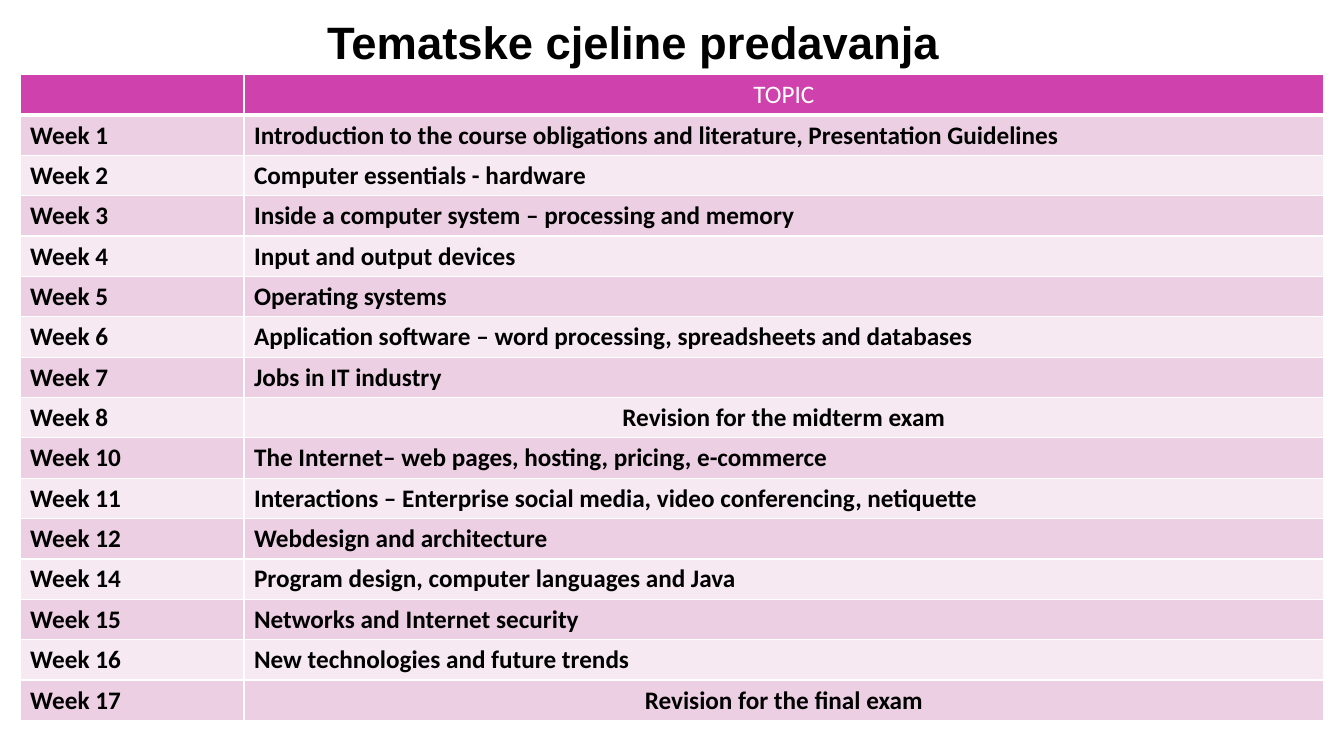
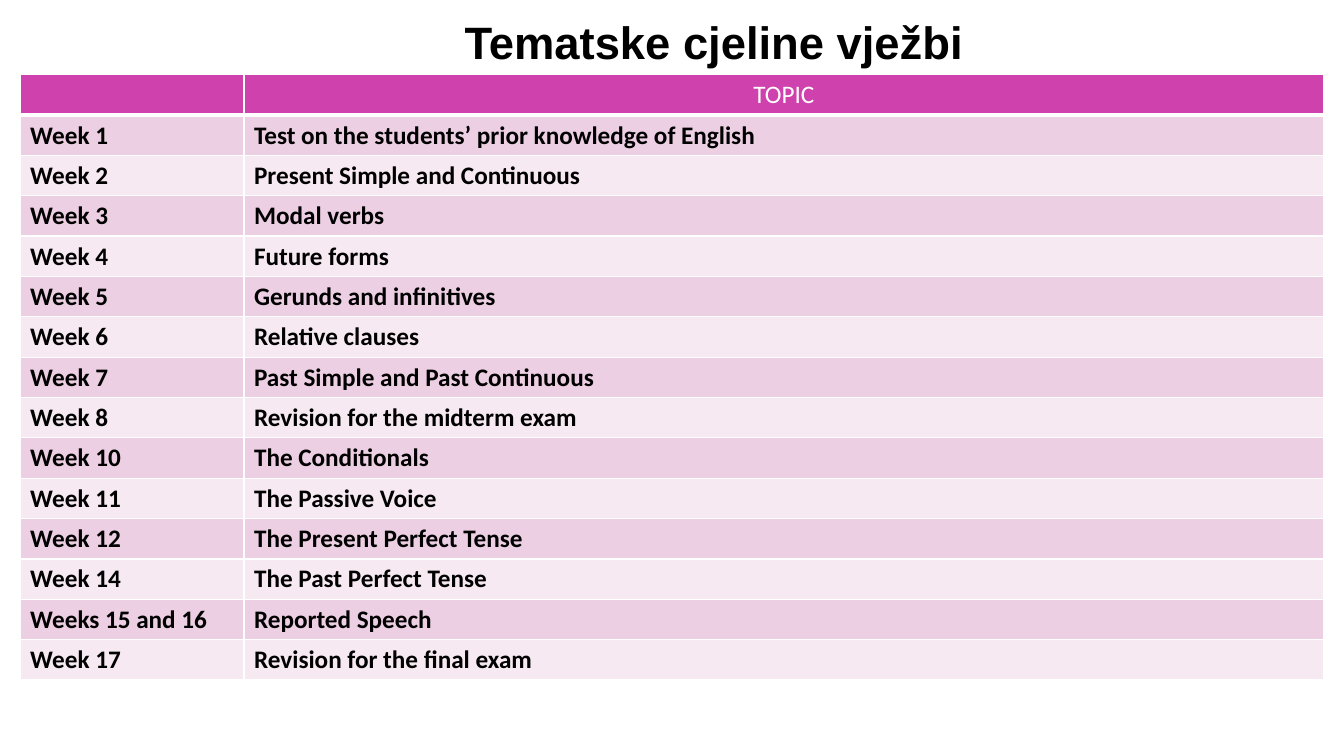
from lxml.etree import SubElement
from pptx import Presentation
from pptx.dml.color import RGBColor
from pptx.enum.text import MSO_ANCHOR, PP_ALIGN
from pptx.oxml.ns import qn
from pptx.util import Inches, Pt

# Shared style
BLACK, WHITE = "000000", "FFFFFF"
HEADER, BAND_DARK, BAND_LIGHT = "CF41AD", "EDCFE3", "F6E9F1"
TITLE_FONT, BODY_FONT = "Arial", "Calibri"
TITLE_TOP, TITLE_W, TITLE_H = 0.31, 9.71, 0.27
TABLE_LEFT, TABLE_TOP, ROW_H = 0.2, 0.74, 0.4
COL_WIDTHS = (2.22, 10.71)

# Topics: (week, topic)
LECTURES = [
    ("Week 1", "Introduction to the course obligations and literature, Presentation Guidelines"),
    ("Week 2", "Computer essentials - hardware"),
    ("Week 3", "Inside a computer system – processing and memory"),
    ("Week 4", "Input and output devices"),
    ("Week 5", "Operating systems"),
    ("Week 6", "Application software – word processing, spreadsheets and databases"),
    ("Week 7", "Jobs in IT industry"),
    ("Week 8", "Revision for the midterm exam"),
    ("Week 10", "The Internet– web pages, hosting, pricing, e-commerce"),
    ("Week 11", "Interactions – Enterprise social media, video conferencing, netiquette"),
    ("Week 12", "Webdesign and architecture"),
    ("Week 14", "Program design, computer languages and Java"),
    ("Week 15", "Networks and Internet security"),
    ("Week 16", "New technologies and future trends"),
    ("Week 17", "Revision for the final exam"),
]
EXERCISES = [
    ("Week 1", "Test on the students’ prior knowledge of English"),
    ("Week 2", "Present Simple and Continuous"),
    ("Week 3", "Modal verbs"),
    ("Week 4", "Future forms"),
    ("Week 5", "Gerunds and infinitives"),
    ("Week 6", "Relative clauses"),
    ("Week 7", "Past Simple and Past Continuous"),
    ("Week 8", "Revision for the midterm exam"),
    ("Week 10", "The Conditionals"),
    ("Week 11", "The Passive Voice"),
    ("Week 12", "The Present Perfect Tense"),
    ("Week 14", "The Past Perfect Tense"),
    ("Weeks 15 and 16", "Reported Speech"),
    ("Week 17", "Revision for the final exam"),
]


def rgb(color):
    return RGBColor.from_string(color)


def write(tf, text, font=BODY_FONT, size=18, color=BLACK, bold=True,
          align=PP_ALIGN.LEFT, spacing=None):
    p = tf.paragraphs[0]
    p.alignment = align
    if spacing:
        p.line_spacing = spacing
    r = p.add_run()
    r.text = text
    r.font.name, r.font.size, r.font.bold = font, Pt(size), bold
    r.font.color.rgb = rgb(color)


def add_title(s, text, center):
    sp = s.shapes.add_textbox(Inches(center - TITLE_W / 2), Inches(TITLE_TOP),
                              Inches(TITLE_W), Inches(TITLE_H))
    tf = sp.text_frame
    tf.word_wrap = True
    tf.vertical_anchor = MSO_ANCHOR.MIDDLE
    write(tf, text, font=TITLE_FONT, size=32.4, align=PP_ALIGN.CENTER, spacing=0.9)


def style_cell(cell, fill, bottom=1):
    # Borders come before the fill in the cell properties
    tc_pr = cell._tc.get_or_add_tcPr()
    for side, width in (("L", 1), ("R", 1), ("T", 1), ("B", bottom)):
        ln = SubElement(tc_pr, qn(f"a:ln{side}"), w=str(Pt(width)))
        SubElement(SubElement(ln, qn("a:solidFill")), qn("a:srgbClr"), val=WHITE)
    cell.fill.solid()
    cell.fill.fore_color.rgb = rgb(fill)


def add_schedule(s, topics, center_revisions):
    table = s.shapes.add_table(
        len(topics) + 1, len(COL_WIDTHS), Inches(TABLE_LEFT), Inches(TABLE_TOP),
        Inches(sum(COL_WIDTHS)), Inches(ROW_H * (len(topics) + 1))).table
    for column, width in zip(table.columns, COL_WIDTHS):
        column.width = Inches(width)

    # Header row
    for cell in table.rows[0].cells:
        style_cell(cell, HEADER, bottom=3)
    write(table.cell(0, 1).text_frame, "TOPIC", color=WHITE, bold=False,
          align=PP_ALIGN.CENTER)

    # Banded week rows
    for i, (week, topic) in enumerate(topics, 1):
        for cell in table.rows[i].cells:
            style_cell(cell, BAND_DARK if i % 2 else BAND_LIGHT)
        centered = center_revisions and topic.startswith("Revision")
        write(table.cell(i, 0).text_frame, week)
        write(table.cell(i, 1).text_frame, topic,
              align=PP_ALIGN.CENTER if centered else PP_ALIGN.LEFT)


def add_schedule_slide(prs, title, title_center, topics, center_revisions=False):
    s = prs.slides.add_slide(prs.slide_layouts[6])
    add_title(s, title, title_center)
    add_schedule(s, topics, center_revisions)


def main():
    prs = Presentation()
    prs.slide_width, prs.slide_height = Inches(13.33), Inches(7.5)
    add_schedule_slide(prs, "Tematske cjeline predavanja", 6.28, LECTURES,
                       center_revisions=True)
    add_schedule_slide(prs, "Tematske cjeline vježbi", 7.08, EXERCISES)
    prs.save("out.pptx")


if __name__ == "__main__":
    main()
